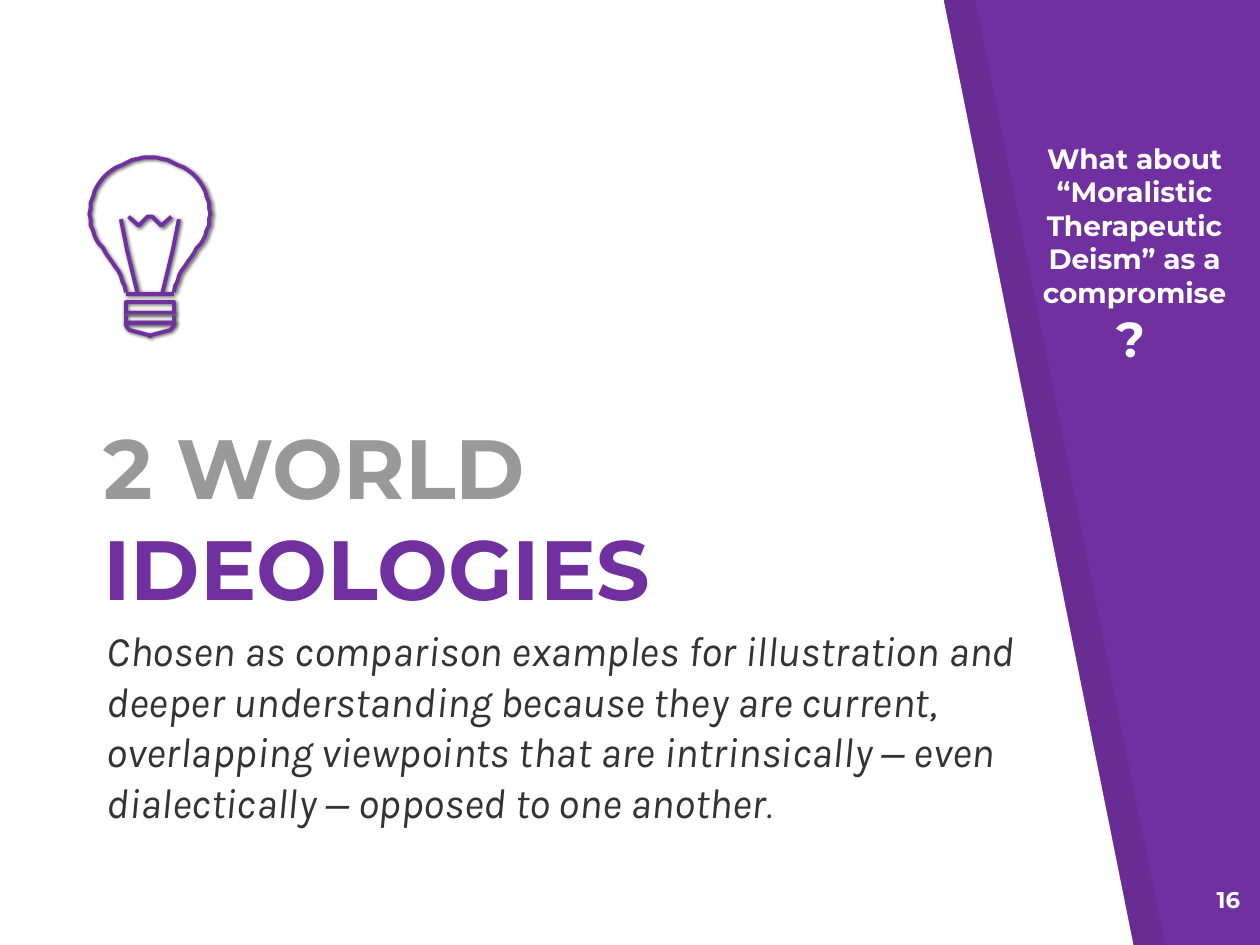
from lxml.etree import SubElement
from pptx import Presentation
from pptx.dml.color import RGBColor
from pptx.enum.shapes import MSO_CONNECTOR
from pptx.enum.text import MSO_ANCHOR, MSO_AUTO_SIZE, PP_ALIGN
from pptx.oxml.ns import qn
from pptx.util import Inches, Pt

PURPLE, WHITE, GREY, DARK = "7030A0", "FFFFFF", "999999", "333333"
UNIT = Inches(0.01)
AXIS = 119
GLASS = [
    (119, 125), (124, 125), (128, 126), (133, 127), (137, 129), (141, 131),
    (146, 133), (149, 135), (153, 138), (156, 141), (159, 145), (161, 148),
    (163, 152), (164, 156), (166, 161), (166, 165), (167, 170), (166, 174),
    (166, 179), (164, 183), (163, 187), (161, 191), (159, 194), (156, 197),
    (154, 201), (149, 208), (147, 211), (144, 215), (142, 219), (141, 223),
    (139, 227), (138, 232),
]
CAP = [(119, 267), (120, 266), (135, 262), (136, 261), (137, 260), (138, 258), (138, 256)]
SPARK = [(119, 172), (121, 172), (128, 179), (136, 172)]
WIRE = [(142, 174), (137, 199), (129, 232)]


def color(code):
    """Turn a hex string into a colour."""
    return RGBColor.from_string(code)


def flip(points):
    """Mirror points across the axis of the bulb."""
    return [(2 * AXIS - x, y) for x, y in points]


def whole(half):
    """Join a right half, listed from the axis out, to its mirror."""
    return flip(half)[::-1] + half[1:]


def draw(slide, points, close):
    """Add a freeform through points in hundredths of an inch."""
    pen = slide.shapes.build_freeform(*points[0], scale=UNIT)
    pen.add_line_segments(points[1:], close=close)
    shape = pen.convert_to_shape()
    shape.shadow.inherit = False
    return shape


def panel(slide, left, fill, alpha=None):
    """Add one slanted panel shifted right by left."""
    points = [(left, -2), (left, 752), (left + 900, 752), (left + 749, 0)]
    shape = draw(slide, points, True)
    shape.line.fill.background()
    shape.fill.solid()
    shape.fill.fore_color.rgb = color(fill)
    if alpha:
        tone = shape.fill._xPr.find(".//" + qn("a:srgbClr"))
        SubElement(tone, qn("a:alpha"), val=str(alpha * 1000))


def stroke(shape):
    """Give a shape the purple line and soft shadow of the bulb."""
    shape.line.color.rgb = color(PURPLE)
    shape.line.width = Pt(2.25)
    props = shape._element.spPr
    effects = props.find(qn("a:effectLst"))
    if effects is None:
        effects = SubElement(props, qn("a:effectLst"))
    shade = SubElement(effects, qn("a:outerShdw"), blurRad=str(Pt(2)),
                       dist=str(Pt(1)), dir=str(40 * 60000), rotWithShape="0")
    SubElement(shade, qn("a:srgbClr"), val="666666")


def bulb(slide):
    """Draw the light bulb from mirrored outlines."""
    rings = [[(100, top), (100, top + 8), (138, top + 8), (138, top)] for top in (248, 240)]
    parts = [(ring, True) for ring in rings]
    parts += [(whole(CAP), True), (flip(WIRE), False), (whole(GLASS), False),
              (WIRE, False), (whole(SPARK), False)]
    for points, close in parts:
        shape = draw(slide, points, close)
        shape.fill.background()
        stroke(shape)
    neck = slide.shapes.add_connector(MSO_CONNECTOR.STRAIGHT, Inches(1), Inches(2.33),
                                      Inches(1.38), Inches(2.33))
    stroke(neck)


def write(shape, box, runs, align=PP_ALIGN.LEFT, anchor=MSO_ANCHOR.TOP, pad=0.1, before=0):
    """Place a text shape and fill it with one paragraph of runs."""
    shape.left, shape.top, shape.width, shape.height = map(Inches, box)
    frame = shape.text_frame
    look = {"word_wrap": True, "auto_size": MSO_AUTO_SIZE.NONE, "vertical_anchor": anchor,
            "margin_left": Inches(0.1), "margin_right": Inches(0.1),
            "margin_top": Inches(pad), "margin_bottom": Inches(pad)}
    for name, value in look.items():
        setattr(frame, name, value)
    para = frame.paragraphs[0]
    para.alignment, para.space_before = align, Pt(before)
    for text, face, size, code in runs:
        run = para.add_run()
        run.text = text
        strong = face == "Montserrat"
        style = {"name": face, "size": Pt(size), "bold": strong, "italic": not strong}
        for name, value in style.items():
            setattr(run.font, name, value)
        run.font.color.rgb = color(code)


def label(slide, box, runs, **look):
    """Add a text box."""
    shape = slide.shapes.add_textbox(*map(Inches, box))
    write(shape, box, runs, **look)


def heading(slide, box):
    """Move and format the title, above the panels."""
    title = slide.shapes.title
    slide.shapes._spTree.append(title._element)
    runs = [("2 WORLD ", "Montserrat", 48, GREY), ("IDEOLOGIES", "Montserrat", 48, PURPLE)]
    write(title, box, runs, anchor=MSO_ANCHOR.BOTTOM)


def summary(slide, box):
    """Add the text below the title."""
    parts = [
        ("Chosen as comparison examples for illustration and deeper understanding because "
         "they are current, overlapping viewpoints that are intrinsically ", "Karla", 24),
        ("–", "Arial", 24), (" even dialectically ", "Karla", 24),
        ("–", "Arial", 24), (" opposed to one another", "Karla", 24), (".", "Karla", 20),
    ]
    label(slide, box, [(*part, DARK) for part in parts], before=6)


def aside(slide, box):
    """Add the question on the purple side."""
    parts = [("What about “Moralistic Therapeutic Deism” as a compromise", 16),
             ("?", 28), (" ", 16)]
    runs = [(text, "Montserrat", size, WHITE) for text, size in parts]
    label(slide, box, runs, align=PP_ALIGN.CENTER, pad=0.05)


def main():
    """Build and save the slide."""
    deck = Presentation()
    deck.slide_width, deck.slide_height = Inches(10), Inches(7.5)
    slide = deck.slides.add_slide(deck.slide_layouts[5])
    slide.background.fill.solid()
    slide.background.fill.fore_color.rgb = color(PURPLE)
    panel(slide, 25, "000000", 7)
    panel(slide, 0, WHITE)
    heading(slide, (0.72, 3.31, 5.93, 1.69))
    summary(slide, (0.75, 4.86, 8, 1.14))
    bulb(slide)
    label(slide, (9.34, 6.93, 0.6, 0.57), [("16", "Montserrat", 13, WHITE)],
          align=PP_ALIGN.RIGHT)
    aside(slide, (8.17, 1.07, 1.67, 1.92))
    deck.save("out.pptx")


if __name__ == "__main__":
    main()
